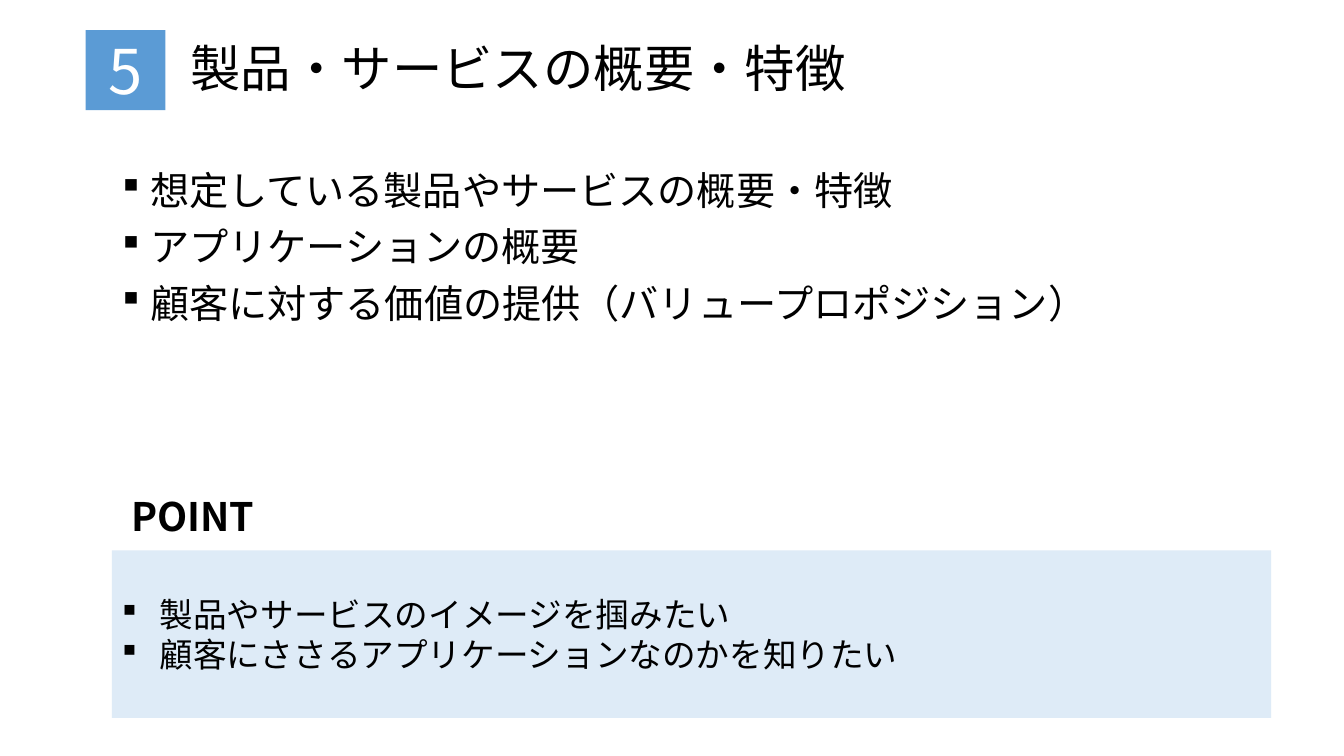
import pptx
import pptx.util
import pptx.dml.color
import pptx.enum.shapes
import pptx.enum.text
import pptx.oxml
import pptx.oxml.ns

Pt = pptx.util.Pt
Align = pptx.enum.text.PP_ALIGN
Anchor = pptx.enum.text.MSO_ANCHOR
Shape = pptx.enum.shapes.MSO_SHAPE
FONT = "Noto Sans CJK JP"
COLORS = {"badge": "5B9BD5", "panel": "DEEBF7", "text": "000000", "light": "FFFFFF"}


def color(name):
    """Return the named colour."""
    return pptx.dml.color.RGBColor.from_string(COLORS[name])


def bullet(para, indent):
    """Give a paragraph a square bullet with a hanging indent."""
    props = para._p.get_or_add_pPr()
    props.set("marL", str(Pt(indent)))
    props.set("indent", str(-Pt(indent)))
    for tag, key, value in (("a:buFont", "typeface", "Wingdings"), ("a:buChar", "char", "§")):
        item = pptx.oxml.xmlchemy.OxmlElement(tag)
        item.set(key, value)
        props.append(item)


def write(shape, text, size, tint="text", bold=False, align=Align.LEFT,
          anchor=Anchor.TOP, indent=0, line=1.0, before=0):
    """Fill a shape with one formatted paragraph per line of text."""
    frame = shape.text_frame
    frame.word_wrap = True
    frame.auto_size = pptx.enum.text.MSO_AUTO_SIZE.NONE
    frame.vertical_anchor = anchor
    for i, words in enumerate(text.split("\n")):
        para = frame.add_paragraph() if i else frame.paragraphs[0]
        para.alignment = align
        para.line_spacing = line
        para.space_before = Pt(before)
        if indent:
            bullet(para, indent)
        run = para.add_run()
        run.text = words
        run.font.size = Pt(size)
        run.font.bold = bold
        run.font.color.rgb = color(tint)
        run.font.name = FONT
        east = pptx.oxml.xmlchemy.OxmlElement("a:ea")
        east.set("typeface", FONT)
        run.font._element.append(east)


def place(shape, left, top, width, height):
    """Move a shape to a box given in points."""
    shape.left, shape.top = Pt(left), Pt(top)
    shape.width, shape.height = Pt(width), Pt(height)


def block(slide, kind, fill, *box):
    """Add a plain filled shape without line or shadow."""
    shape = slide.shapes.add_shape(kind, *map(Pt, box))
    shape.shadow.inherit = False
    shape.fill.solid()
    shape.fill.fore_color.rgb = color(fill)
    shape.line.fill.background()
    return shape


def header(slide, left, top, width, height):
    """Draw the numbered badge and the slide title."""
    side = 57
    badge = block(slide, Shape.RECTANGLE, "badge", left, top, side, side)
    write(badge, "5", 44, tint="light", align=Align.CENTER, anchor=Anchor.MIDDLE)
    shift = side + 10.6
    place(slide.shapes.title, left + shift, top, width - shift, height)
    write(slide.shapes.title, "製品・サービスの概要・特徴", 36, anchor=Anchor.MIDDLE, line=0.9)


def topics(slide, *box):
    """Fill the main list."""
    body = slide.placeholders[1]
    place(body, *box)
    write(body, "想定している製品やサービスの概要・特徴\nアプリケーションの概要\n"
          "顧客に対する価値の提供（バリュープロポジション）",
          28, indent=20, line=0.9, before=10)


def point(slide, left, top, width, height):
    """Draw the panel of key points under its label."""
    label = slide.shapes.add_textbox(Pt(left - 9.4), Pt(top), Pt(134), Pt(41))
    write(label, "POINT", 28, bold=True, align=Align.CENTER)
    drop = 45.4
    panel = block(slide, Shape.ROUNDED_RECTANGLE, "panel",
                  left, top + drop, width, height - drop)
    panel.adjustments[0] = 0
    write(panel, "製品やサービスのイメージを掴みたい\n顧客にささるアプリケーションなのかを知りたい",
          24, anchor=Anchor.MIDDLE, indent=27)


def main():
    """Build and save the deck."""
    deck = pptx.Presentation()
    deck.slide_width, deck.slide_height = Pt(960), Pt(540)
    slide = deck.slides.add_slide(deck.slide_layouts[1])
    header(slide, 61.2, 21.6, 828, 59)
    topics(slide, 80, 119, 828, 230)
    point(slide, 80, 347.8, 828, 165)
    deck.save("out.pptx")


if __name__ == "__main__":
    main()
